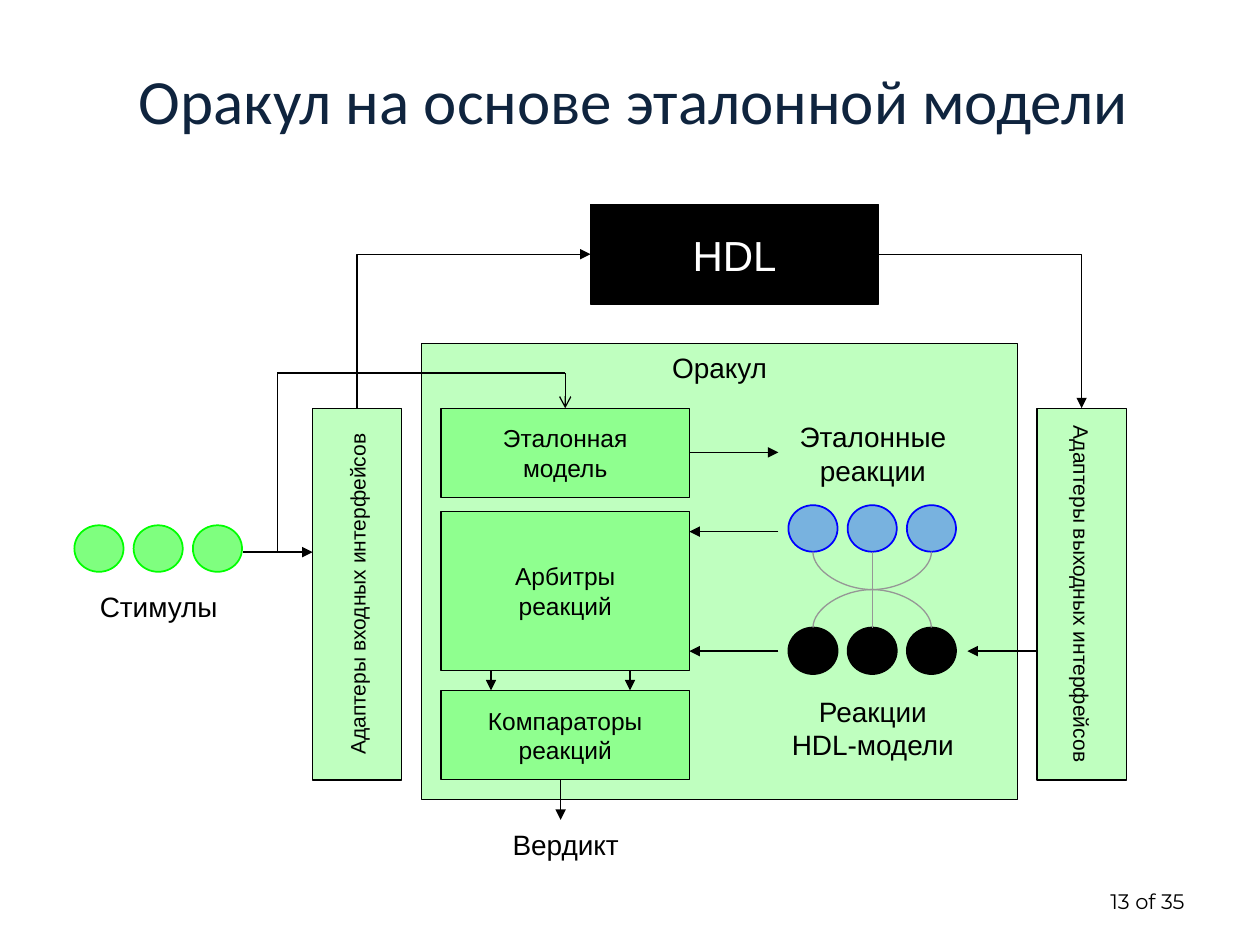
from collections import namedtuple

from lxml.etree import SubElement
from pptx import Presentation
from pptx.dml.color import RGBColor
from pptx.enum.shapes import MSO_CONNECTOR as Link, MSO_SHAPE as Preset
from pptx.enum.text import MSO_ANCHOR as Anchor, PP_ALIGN as Align
from pptx.oxml.ns import qn
from pptx.util import Pt

COLORS = {
    "title": "0F243E", "black": "000000", "white": "FFFFFF",
    "green": "00FF00", "blue": "3366FF", "blue_line": "0000FF",
    "gray": "969696",
}
Box = namedtuple("Box", "x y w h")
CIRCLE_W, CIRCLE_H, CIRCLE_STEP = 28.1, 26.6, 33.85


def rgb(name):
    return RGBColor.from_string(COLORS[name])


def write(frame, lines, size, color="black", font="Arial",
          align=Align.CENTER, anchor=Anchor.MIDDLE, wrap=False):
    frame.word_wrap = wrap
    frame.vertical_anchor = anchor
    for number, line in enumerate(lines):
        paragraph = frame.add_paragraph() if number else frame.paragraphs[0]
        paragraph.alignment = align
        run = paragraph.add_run()
        run.text = line
        run.font.size = Pt(size)
        run.font.name = font
        run.font.color.rgb = rgb(color)


def add_caption(slide, box, lines, size=16, **style):
    caption = slide.shapes.add_textbox(*map(Pt, box))
    write(caption.text_frame, lines, size, **style)


def add_figure(slide, preset, box, fill, opacity=100, line="black", width=0.75):
    """Add a preset shape; opacity is a percentage."""
    figure = slide.shapes.add_shape(preset, *map(Pt, box))
    figure.shadow.inherit = False
    figure.fill.solid()
    figure.fill.fore_color.rgb = rgb(fill)
    if opacity < 100:
        tint = figure.fill._xPr.find(qn("a:solidFill"))[0]
        SubElement(tint, qn("a:alpha"), val=str(opacity * 1000))
    figure.line.color.rgb = rgb(line)
    figure.line.width = Pt(width)
    return figure


def add_block(slide, box, lines, size=14, fill="green", opacity=25,
              rotation=0, **style):
    block = add_figure(slide, Preset.RECTANGLE, box, fill, opacity)
    block.rotation = rotation
    write(block.text_frame, lines, size, **style)


def add_link(slide, start, end, kind=Link.STRAIGHT, color="black",
             head=None, tail=None):
    """Add a connector; head and tail name the arrowheads at start and end."""
    link = slide.shapes.add_connector(kind, *map(Pt, (*start, *end)))
    link.line.color.rgb = rgb(color)
    link.line.width = Pt(0.75)
    outline = link.line._get_or_add_ln()
    for tag, arrow in (("a:headEnd", head), ("a:tailEnd", tail)):
        if arrow:
            SubElement(outline, qn(tag), type=arrow)
    SubElement(link._element.spPr, qn("a:effectLst"))
    return link


def add_corner(slide, start, end, **arrows):
    """Add a link that runs level from start, then upright to end."""
    corner = add_link(slide, start, end, Link.ELBOW, **arrows)
    corner._element.spPr.find(qn("a:prstGeom")).set("prst", "bentConnector2")


def add_upright_curve(slide, start, end):
    """Add an S curve that leaves start and meets end vertically."""
    middle_x, middle_y = (start[0] + end[0]) / 2, (start[1] + end[1]) / 2
    half_x, half_y = (end[0] - start[0]) / 2, (end[1] - start[1]) / 2
    curve = add_link(slide, (middle_x - half_y, middle_y + half_x),
                     (middle_x + half_y, middle_y - half_x), Link.CURVE, "gray")
    curve._element.spPr.find(qn("a:xfrm")).set("rot", str(90 * 60000))


def add_circles(slide, x, y, fill, opacity, line):
    for index in range(3):
        box = Box(x + index * CIRCLE_STEP, y, CIRCLE_W, CIRCLE_H)
        add_figure(slide, Preset.OVAL, box, fill, opacity, line, 1)


def add_adapter(slide, box, text, rotation):
    """Fill the upright box with a block turned on its side."""
    turned = Box(box.x + (box.w - box.h) / 2, box.y + (box.h - box.w) / 2,
                 box.h, box.w)
    add_block(slide, turned, [text], 12, rotation=rotation)


def add_hdl(slide, box, input_adapter, output_adapter):
    add_block(slide, box, ["HDL"], 24, "black", 100, color="white")
    middle = box.y + box.h / 2
    add_corner(slide, (box.x + box.w, middle),
               (output_adapter.x + output_adapter.w / 2, output_adapter.y),
               tail="triangle")
    add_corner(slide, (box.x, middle),
               (input_adapter.x + input_adapter.w / 2, input_adapter.y),
               head="triangle")


def add_reactions(slide, box):
    """Place both rows of reactions, their captions and the matching lines."""
    add_caption(slide, Box(box.x, box.y, box.w, 34), ["Эталонные", "реакции"])
    add_caption(slide, Box(box.x, box.y + 155, box.w, 38),
                ["Реакции", "HDL-модели"])
    first, upper, lower = box.x + 5.7, box.y + 46.8, box.y + 116.7
    add_circles(slide, first, upper, "blue", 50, "blue_line")
    add_circles(slide, first, lower, "black", 100, "black")
    left, center, right = (first + CIRCLE_W / 2 + index * CIRCLE_STEP
                           for index in range(3))
    top = upper + CIRCLE_H
    add_upright_curve(slide, (left, top), (right, lower))
    add_upright_curve(slide, (right, top), (left, lower))
    add_link(slide, (center, top), (center, lower), color="gray")


def add_oracle(slide, box, output_adapter):
    add_block(slide, box, ["Оракул"], 16, anchor=Anchor.TOP)
    x, w = box.x + 11, 142
    model = Box(x, box.y + 36.8, w, 51)
    arbiters = Box(x, box.y + 95.8, w, 90.7)
    comparators = Box(x, box.y + 198, w, 51)
    for part, lines in ((comparators, ["Компараторы", "реакций"]),
                        (model, ["Эталонная", "модель"]),
                        (arbiters, ["Арбитры", "реакций"])):
        add_block(slide, part, lines)

    reactions = Box(box.x + 203.8, box.y + 45.4, 108, 193)
    add_reactions(slide, reactions)
    edge, near = x + w, reactions.x
    far = near + reactions.w
    model_y, expected_y, actual_y = (box.y + dy for dy in (62, 107.3, 175.6))
    bottom = comparators.y + comparators.h
    arrows = [
        ((output_adapter.x, actual_y), (far, actual_y)),
        ((near, expected_y), (edge, expected_y)),
        ((near, actual_y), (edge, actual_y)),
        ((edge, model_y), (near, model_y)),
        ((x + 68.4, bottom), (x + 68.4, bottom + 23)),
    ]
    for offset in (28.6, 108):
        arrows.append(((x + offset, arbiters.y + arbiters.h),
                       (x + offset, comparators.y)))
    for start, end in arrows:
        add_link(slide, start, end, tail="triangle")
    add_caption(slide, Box(x + 17.3, bottom + 17.4, 108, 39.6), ["Вердикт"])
    return model


def add_stimuli(slide, box, input_adapter, model):
    add_circles(slide, box.x + 5.8, box.y, "green", 50, "green")
    add_caption(slide, Box(box.x, box.y + 26.7, box.w, 39.6), ["Стимулы"])
    level, branch_x, branch_y = box.y + 15.3, box.x + 121.7, 213.1
    add_link(slide, (box.x + 102.3, level), (input_adapter.x, level),
             tail="triangle")
    model_x = model.x + model.w / 2
    add_link(slide, (branch_x, level), (branch_x, branch_y))
    add_link(slide, (branch_x, branch_y), (model_x, branch_y))
    add_link(slide, (model_x, branch_y), (model_x, model.y), tail="arrow")


def add_heading(slide, box):
    title = slide.shapes.title
    title.left, title.top, title.width, title.height = map(Pt, box)
    write(title.text_frame, ["Оракул на основе эталонной модели"], 36, "title",
          "Calibri", wrap=True)


def main():
    deck = Presentation()
    deck.slide_width, deck.slide_height = Pt(720), Pt(540)
    slide = deck.slides.add_slide(deck.slide_layouts[5])
    input_adapter = Box(178.6, 233.3, 51, 212.4)
    output_adapter = input_adapter._replace(x=592.6)

    add_heading(slide, Box(20, 26, 684, 61))
    add_caption(slide, Box(516, 500.5, 168, 29), ["13 of 35"], 12,
                font="Montserrat", align=Align.RIGHT, wrap=True)
    add_hdl(slide, Box(337.5, 116.8, 164.5, 57), input_adapter, output_adapter)
    model = add_oracle(slide, Box(241, 196.5, 340.5, 260.5), output_adapter)
    add_adapter(slide, input_adapter, "Адаптеры входных интерфейсов", 270)
    add_adapter(slide, output_adapter, "Адаптеры выходных интерфейсов", 90)
    add_stimuli(slide, Box(36.7, 300.2, 108, 66), input_adapter, model)
    deck.save("out.pptx")


if __name__ == "__main__":
    main()
